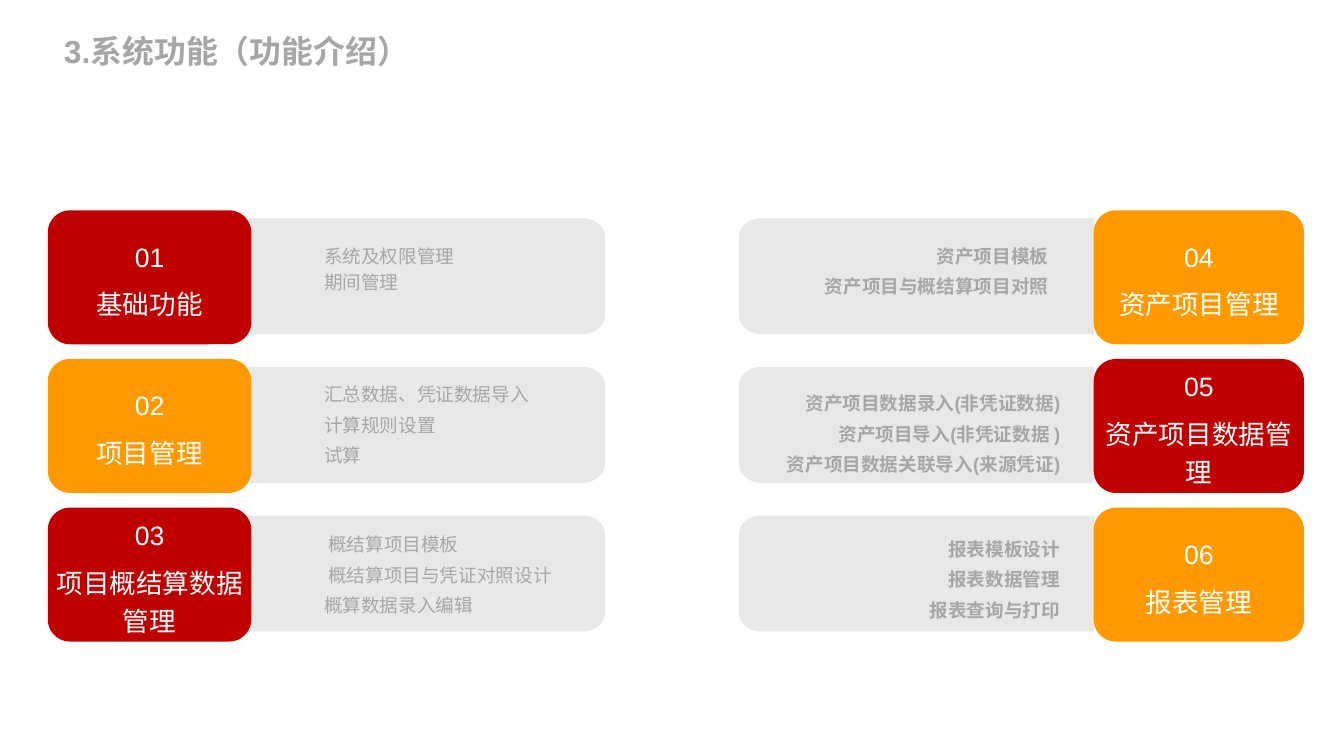
from copy import deepcopy
from math import cos, pi, sin

from lxml import etree
from pptx import Presentation
from pptx.dml.color import RGBColor
from pptx.enum.shapes import MSO_SHAPE
from pptx.enum.text import MSO_ANCHOR, MSO_AUTO_SIZE, PP_ALIGN
from pptx.oxml.ns import qn
from pptx.util import Cm, Pt

ROUNDED = MSO_SHAPE.ROUNDED_RECTANGLE
TOP, MIDDLE = MSO_ANCHOR.TOP, MSO_ANCHOR.MIDDLE
LEFT, CENTER, RIGHT = PP_ALIGN.LEFT, PP_ALIGN.CENTER, PP_ALIGN.RIGHT
FIT_TEXT = MSO_AUTO_SIZE.SHAPE_TO_FIT_TEXT

HEADING = "3.系统功能（功能介绍）"

BASIC_MODULES = [
    {"card": ["01", "基础功能"], "details": ["系统及权限管理\v期间管理"],
     "details_box": (8.61, 6.38, 6.55, 1.37)},
    {"card": ["02", "项目管理"],
     "details": ["汇总数据、凭证数据导入", "计算规则设置", "试算"],
     "details_box": (8.61, 10.06, 6.55, 2.39)},
    {"card": ["03", "项目概结算数据管理"],
     "details": [" 概结算项目模板", " 概结算项目与凭证对照设计", "概算数据录入编辑"],
     "details_box": (8.61, 14.05, 6.55, 2.39)},
]
ASSET_MODULES = [
    {"card": ["04", "资产项目管理"],
     "details": ["资产项目模板", "资产项目与概结算项目对照"],
     "details_box": (20.52, 6.38, 7.34, 1.55)},
    {"card": ["05", "资产项目数据管理"],
     "details": ["资产项目数据录入(非凭证数据)", "资产项目导入(非凭证数据 )",
                 "资产项目数据关联导入(来源凭证)"],
     "details_box": (19.86, 10.31, 8.31, 2.39)},
    {"card": ["06", "报表管理"],
     "details": ["报表模板设计", "报表数据管理", "报表查询与打印"],
     "details_box": (21.62, 14.17, 6.55, 2.34)},
]

THEME = {
    "font": "Arial",
    "red": RGBColor(0xC0, 0x00, 0x00),
    "orange": RGBColor(0xFF, 0x99, 0x00),
    "panel": RGBColor(0xE6, 0xE6, 0xE6),
    "grey": RGBColor(0xA6, 0xA6, 0xA6),
    "white": RGBColor(0xFF, 0xFF, 0xFF),
    "heading_size": 24,
    "card_size": 20,
    "details_size": 14,
}

COLUMNS = [
    {"modules": BASIC_MODULES, "card_left": 1.27, "card_width": 5.41,
     "panel_left": 6.63, "align": LEFT, "bold": False,
     "colors": ("red", "orange")},
    {"modules": ASSET_MODULES, "card_left": 29.06, "card_width": 5.59,
     "panel_left": 19.63, "align": RIGHT, "bold": True,
     "colors": ("orange", "red")},
]
CARD_TOP, CARD_HEIGHT, ROW_PITCH = 5.59, 3.56, 3.95
PANEL_TOP, PANEL_WIDTH, PANEL_HEIGHT = 5.8, 9.45, 3.08
CORNER_WIDTH, CORNER_HEIGHT, CORNER_STEPS = 0.59, 0.52, 10


def write(holder, lines, *, size, color, bold=False, align=LEFT, anchor=TOP,
          line_spacing=None, before=0, after=0, grow=False):
    frame = holder.text_frame
    frame.word_wrap = True
    frame.vertical_anchor = anchor
    frame.margin_left = frame.margin_right = 0
    frame.margin_top = frame.margin_bottom = 0
    if grow:
        frame.auto_size = FIT_TEXT
    for index, line in enumerate(lines):
        paragraph = frame.add_paragraph() if index else frame.paragraphs[0]
        paragraph.text = line
        paragraph.alignment = align
        paragraph.line_spacing = line_spacing
        paragraph.space_before = Pt(before)
        paragraph.space_after = Pt(after)
        for run in paragraph.runs:
            run.font.name = THEME["font"]
            run.font.size = Pt(size)
            run.font.bold = bold
            run.font.color.rgb = color
        for line_break in paragraph._p.findall(qn("a:br")):
            line_break.append(deepcopy(paragraph.runs[0]._r.rPr))


def add_text(slide, box, lines, **style):
    write(slide.shapes.add_textbox(*map(Cm, box)), lines, grow=True, **style)


def add_panel(slide, left, top, rounded_right):
    outline = [(0, 0)]
    for y_center, start in ((CORNER_HEIGHT, -pi / 2),
                            (PANEL_HEIGHT - CORNER_HEIGHT, 0)):
        for step in range(CORNER_STEPS + 1):
            angle = start + step / CORNER_STEPS * pi / 2
            outline.append((PANEL_WIDTH - CORNER_WIDTH + CORNER_WIDTH * cos(angle),
                            y_center + CORNER_HEIGHT * sin(angle)))
    outline.append((0, PANEL_HEIGHT))
    if not rounded_right:
        outline = [(PANEL_WIDTH - x, y) for x, y in outline]
    points = [(Cm(left + x), Cm(top + y)) for x, y in outline]
    builder = slide.shapes.build_freeform(*points[0])
    builder.add_line_segments(points[1:], close=True)
    panel = builder.convert_to_shape()
    panel.shadow.inherit = False
    panel.fill.solid()
    panel.fill.fore_color.rgb = THEME["panel"]
    panel.line.fill.background()
    color = panel._element.spPr.find(qn("a:solidFill"))[0]
    etree.SubElement(color, qn("a:alpha")).set("val", "90000")


def add_card(slide, box, lines, fill):
    card = slide.shapes.add_shape(ROUNDED, *map(Cm, box))
    card.shadow.inherit = False
    card.fill.solid()
    card.fill.fore_color.rgb = fill
    card.line.fill.background()
    write(card, lines, size=THEME["card_size"], color=THEME["white"],
          align=CENTER, anchor=MIDDLE, line_spacing=1.2, after=7)


def main():
    deck = Presentation()
    deck.slide_width, deck.slide_height = Cm(35.71), Cm(20.09)
    slide = deck.slides.add_slide(deck.slide_layouts[6])

    for column in COLUMNS:
        for row, module in enumerate(column["modules"]):
            offset = row * ROW_PITCH
            add_panel(slide, column["panel_left"], PANEL_TOP + offset,
                      rounded_right=column["align"] == LEFT)
            add_text(slide, module["details_box"], module["details"],
                     size=THEME["details_size"], color=THEME["grey"],
                     bold=column["bold"], align=column["align"],
                     line_spacing=1.2, before=2.8)
            add_card(slide, (column["card_left"], CARD_TOP + offset,
                             column["card_width"], CARD_HEIGHT),
                     module["card"], THEME[column["colors"][row % 2]])

    add_text(slide, (1.7, 0.84, 11.56, 1.02), [HEADING],
             size=THEME["heading_size"], color=THEME["grey"], bold=True,
             anchor=MIDDLE)
    deck.save("out.pptx")


if __name__ == "__main__":
    main()
